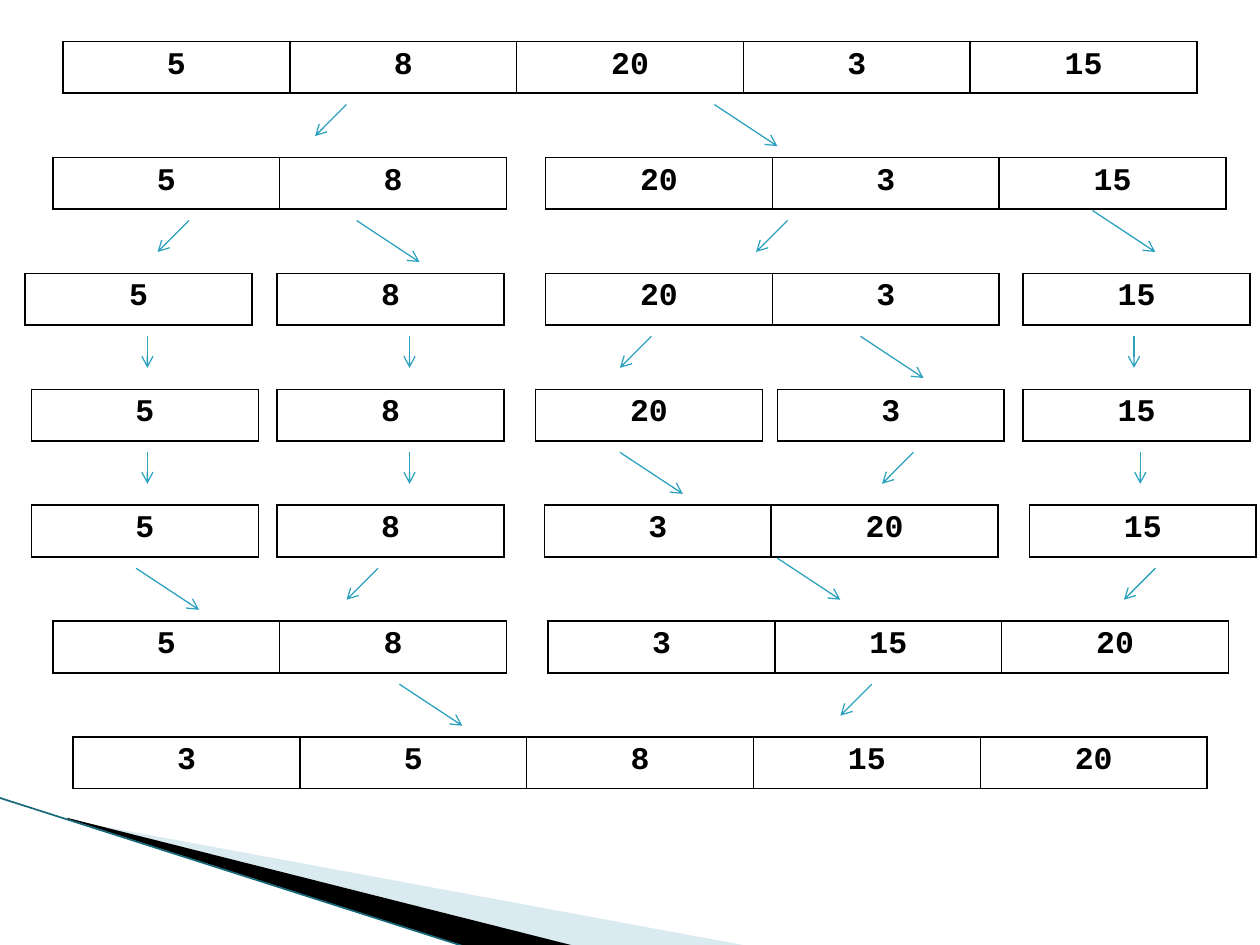
from lxml import etree
from pptx import Presentation
from pptx.dml.color import RGBColor
from pptx.enum.shapes import MSO_CONNECTOR
from pptx.enum.text import PP_ALIGN
from pptx.oxml.ns import qn
from pptx.util import Inches, Pt

STRAIGHT = MSO_CONNECTOR.STRAIGHT
CENTER = PP_ALIGN.CENTER

# Every level of the merge sort: (left, values) of each array
LEVELS = [
    [(0.5, [5, 8, 20, 3, 15])],
    [(0.42, [5, 8]), (4.33, [20, 3, 15])],
    [(0.2, [5]), (2.2, [8]), (4.33, [20, 3]), (8.12, [15])],
    [(0.25, [5]), (2.2, [8]), (4.25, [20]), (6.17, [3]), (8.12, [15])],
    [(0.25, [5]), (2.2, [8]), (4.32, [3, 20]), (8.17, [15])],
    [(0.42, [5, 8]), (4.35, [3, 15, 20])],
    [(0.58, [3, 5, 8, 15, 20])],
]
# Arrows below each level: (start x, direction)
ARROWS = [
    [(2.75, "left"), (5.67, "right")],
    [(1.5, "left"), (2.83, "right"), (6.25, "left"), (8.67, "raised right")],
    [(1.17, "down"), (3.25, "down"), (5.17, "left"), (6.83, "right"), (9, "down")],
    [(1.17, "down"), (3.25, "down"), (4.92, "right"), (7.25, "left"), (9.05, "down")],
    [(1.08, "right"), (3, "left"), (6.17, "raised right"), (9.17, "left")],
    [(3.17, "right"), (6.92, "left")],
]
# Direction: (drop below the level's top, width, height)
DIRECTIONS = {
    "left": (0.5, -0.25, 0.25),
    "right": (0.5, 0.5, 0.33),
    "raised right": (0.42, 0.5, 0.33),
    "down": (0.5, 0, 0.25),
}
# Corner wedges: (points, fill, opacity in percent)
WEDGES = [
    ([(0.55, 6.51), (5.95, 7.51), (4.56, 7.51), (0.55, 6.5)], "A0CBDC", 40),
    ([(0.53, 6.49), (4.57, 7.51), (3.72, 7.52), (0.54, 6.5)], "000000", 100),
]
FIRST_TOP, LEVEL_STEP = 0.33, 0.92
CELL_WIDTH, CELL_HEIGHT = 1.8, 0.41
FONT = {"name": "Courier New", "size": Pt(18), "bold": True}


def color(value):
    return RGBColor.from_string(value)


def add_child(parent, tag, **attributes):
    return etree.SubElement(parent, qn(tag), attributes)


def add_wedge(slide, points, fill, opacity):
    corners = [(Inches(x), Inches(y)) for x, y in points]
    builder = slide.shapes.build_freeform(*corners[0])
    builder.add_line_segments(corners[1:], close=True)
    shape = builder.convert_to_shape()
    shape.shadow.inherit = False
    shape.line.fill.background()
    shape.fill.solid()
    shape.fill.fore_color.rgb = color(fill)
    if opacity < 100:
        fill_color = shape.fill._xPr.find(qn("a:solidFill"))[0]
        add_child(fill_color, "a:alpha", val=str(opacity * 1000))


def add_line(slide, start, end, line_color, width, arrow=False):
    points = [Inches(value) for value in (*start, *end)]
    connector = slide.shapes.add_connector(STRAIGHT, *points)
    connector.line.color.rgb = color(line_color)
    connector.line.width = Pt(width)
    if arrow:
        add_child(connector.line._get_or_add_ln(), "a:tailEnd", type="arrow")
    add_child(connector._element.spPr, "a:effectLst")


def add_borders(cell):
    """Draw a black 1 pt line on all four sides; lines must precede the fill."""
    properties = cell._tc.get_or_add_tcPr()
    for index, side in enumerate(("a:lnL", "a:lnR", "a:lnT", "a:lnB")):
        border = etree.Element(qn(side), w=str(Pt(1)))
        add_child(add_child(border, "a:solidFill"), "a:srgbClr", val="000000")
        properties.insert(index, border)


def add_array(slide, left, top, values):
    frame = slide.shapes.add_table(
        1, len(values), Inches(left), Inches(top),
        Inches(CELL_WIDTH * len(values)), Inches(CELL_HEIGHT))
    table = frame.table
    table.first_row = table.horz_banding = False
    for column, value in enumerate(values):
        table.columns[column].width = Inches(CELL_WIDTH)
        cell = table.cell(0, column)
        cell.fill.background()
        add_borders(cell)
        paragraph = cell.text_frame.paragraphs[0]
        paragraph.alignment = CENTER
        run = paragraph.add_run()
        run.text = str(value)
        for name, setting in FONT.items():
            setattr(run.font, name, setting)
        run.font.color.rgb = color("000000")


def main():
    presentation = Presentation()
    presentation.slide_width, presentation.slide_height = Inches(10), Inches(7.5)
    slide = presentation.slides.add_slide(presentation.slide_layouts[6])

    for wedge in WEDGES:
        add_wedge(slide, *wedge)
    add_line(slide, (-0.01, 6.33), (3.71, 7.52), "16697A", 0.95)

    tops = [FIRST_TOP + LEVEL_STEP * level for level in range(len(LEVELS))]
    for top, arrays in zip(tops, LEVELS):
        for left, values in arrays:
            add_array(slide, left, top, values)
    for top, arrows in zip(tops, ARROWS):
        for x, direction in arrows:
            drop, width, height = DIRECTIONS[direction]
            y = top + drop
            add_line(slide, (x, y), (x + width, y + height), "2DA2BF", 0.75, arrow=True)

    presentation.save("out.pptx")


if __name__ == "__main__":
    main()
